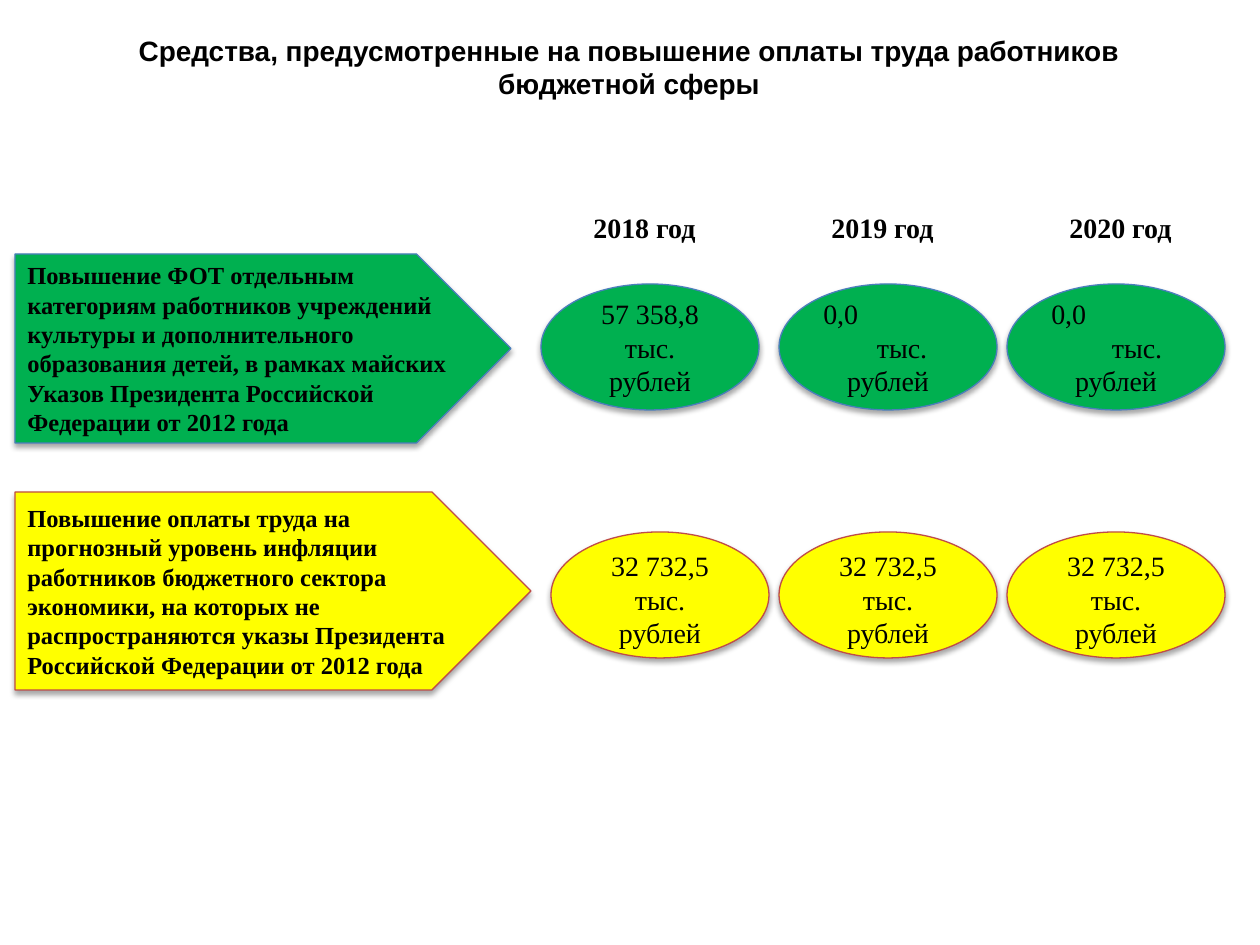
"""Slide on the funds planned for raising public-sector pay, 2018 to 2020."""
from lxml import etree
from pptx import Presentation
from pptx.dml.color import RGBColor
from pptx.enum.shapes import MSO_SHAPE as Shape
from pptx.enum.text import MSO_ANCHOR as Anchor, PP_ALIGN as Align
from pptx.oxml.ns import qn
from pptx.util import Emu, Pt

BLACK = RGBColor(0x00, 0x00, 0x00)
GREEN = RGBColor(0x00, 0xB0, 0x50)
BLUE = RGBColor(0x4B, 0x7E, 0xBC)
YELLOW = RGBColor(0xFF, 0xFF, 0x00)
RED = RGBColor(0xBF, 0x4C, 0x48)
SERIF = "Times New Roman"


def px(count):
    return Emu(round(count * 914400 / 126))


def write(frame, lines, size, bold=False, align=Align.LEFT, font=SERIF):
    frame.word_wrap = True
    frame.text = "\n".join(lines)
    for paragraph in frame.paragraphs:
        paragraph.alignment = align
        for run in paragraph.runs:
            run.font.name = font
            run.font.size = Pt(size)
            run.font.bold = bold
            run.font.color.rgb = BLACK


deck = Presentation()
deck.slide_width, deck.slide_height = px(1260), px(945)
slide = deck.slides.add_slide(deck.slide_layouts[5])
shapes = slide.shapes

title = shapes.title
title.left, title.top, title.width, title.height = px(123), px(27), px(1012), px(80)
title.text_frame.vertical_anchor = Anchor.MIDDLE
write(title.text_frame,
      ["Средства, предусмотренные на повышение оплаты труда работников бюджетной сферы"],
      16, True, Align.CENTER, "Arial")

for column, year in enumerate((2018, 2019, 2020)):
    heading = shapes.add_textbox(px(581 + 238 * column), px(204), px(132), px(47))
    write(heading.text_frame, [f"{year} год"], 16, True)

ZERO = ["0,0", "тыс.", "рублей"]
INFLATION = ["32 732,5 тыс. рублей"]
measures = [
    ("Повышение ФОТ отдельным категориям работников учреждений культуры и "
     "дополнительного образования детей, в рамках майских Указов Президента "
     "Российской Федерации от 2012 года",
     (15, 254, 496, 189), GREEN, BLUE, 284, 6,
     [(541, ["57 358,8 тыс. рублей"], 0), (779, ZERO, 28), (1007, ZERO, 42)]),
    ("Повышение оплаты труда на прогнозный уровень инфляции работников бюджетного "
     "сектора экономики, на которых не распространяются указы Президента "
     "Российской Федерации от 2012 года",
     (15, 492, 516, 198), YELLOW, RED, 532, 14,
     [(551, INFLATION, 0), (779, INFLATION, 0), (1007, INFLATION, 0)]),
]

for purpose, arrow_box, fill, outline, amount_top, inset_top, amounts in measures:
    arrow = shapes.add_shape(Shape.PENTAGON, *map(px, arrow_box))
    write(arrow.text_frame, [purpose], 14, True)
    row = [arrow]
    for left, lines, unit_indent in amounts:
        amount = shapes.add_shape(Shape.OVAL, px(left), px(amount_top), px(218), px(126))
        amount.text_frame.margin_top = px(inset_top)
        write(amount.text_frame, lines, 16, align=Align.CENTER)
        if unit_indent:
            number, unit, _ = amount.text_frame.paragraphs
            number.alignment = Align.LEFT
            unit._p.get_or_add_pPr().set("marL", str(px(unit_indent)))
        row.append(amount)
    for item in row:
        item.text_frame.vertical_anchor = Anchor.MIDDLE
        item.fill.solid()
        item.fill.fore_color.rgb = fill
        item.line.color.rgb = outline
        item.line.width = Pt(0.75)
        item.shadow.inherit = False
        effects = item._element.spPr.find(qn("a:effectLst"))
        shadow = etree.SubElement(effects, qn("a:outerShdw"), blurRad=str(Pt(3.1)),
                                  dist=str(Pt(1.8)), dir="5400000", rotWithShape="0")
        tint = etree.SubElement(shadow, qn("a:srgbClr"), val=str(BLACK))
        etree.SubElement(tint, qn("a:alpha"), val="35000")

deck.save("out.pptx")
